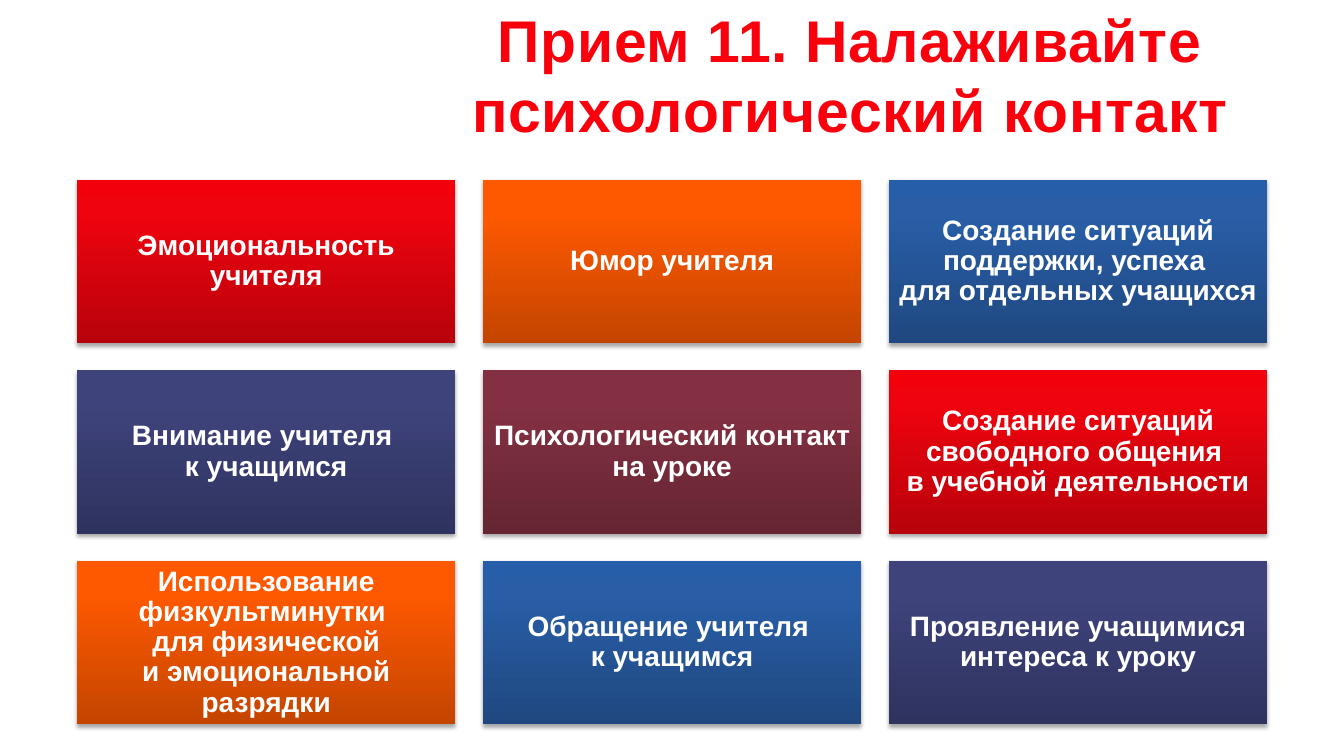
import pptx
import pptx.util
import pptx.oxml
import pptx.oxml.ns
import pptx.dml.color
import pptx.enum.shapes
import pptx.enum.text

Cm = pptx.util.Cm
Pt = pptx.util.Pt

TITLE = "Прием 11. Налаживайте психологический контакт"
CARDS = [
    "Эмоциональность учителя",
    "Юмор учителя",
    "Создание ситуаций поддержки, успеха \nдля отдельных учащихся",
    "Внимание учителя \nк учащимся",
    "Психологический контакт на уроке",
    "Создание ситуаций свободного общения \nв учебной деятельности",
    "Использование физкультминутки \nдля физической\nи эмоциональной разрядки",
    "Обращение учителя \nк учащимся",
    "Проявление учащимися интереса к уроку",
]
GRADIENTS = [
    ("B8020B", "EE030E", "F2000C"),
    ("C44500", "FE5900", "FF5A00"),
    ("1F4880", "295EA7", "265EAA"),
    ("2F335F", "3E437B", "3D427D"),
    ("652533", "833142", "852F42"),
]
STOPS = (0, 80, 100)
COLS = 3
LEFT, TOP = 1.94, 4.53
CARD_W, CARD_H = 9.54, 4.12
STEP_X, STEP_Y = 10.23, 4.8
TITLE_FONT = {"name": "Arial", "size": Pt(42), "bold": True}
CARD_FONT = {"name": "Arial", "size": Pt(20), "bold": True}
FRAME = {"word_wrap": True, "vertical_anchor": pptx.enum.text.MSO_ANCHOR.MIDDLE}
INSETS = dict.fromkeys(
    ("margin_left", "margin_top", "margin_right", "margin_bottom"), Cm(0.21))
NS = pptx.oxml.ns.nsdecls("a")


def rgb(value):
    return pptx.dml.color.RGBColor.from_string(value)


def set_all(target, values):
    for name, value in values.items():
        setattr(target, name, value)


def write(s, text, font, color, frame, spacing):
    tf = s.text_frame
    set_all(tf, frame)
    p = tf.paragraphs[0]
    p.text = text
    p.alignment = pptx.enum.text.PP_ALIGN.CENTER
    p.line_spacing = spacing
    for r in p.runs:
        set_all(r.font, font)
        r.font.color.rgb = rgb(color)
    return p


def shade(s, colors):
    stops = "".join(
        f'<a:gs pos="{pos * 1000}"><a:srgbClr val="{color}"/></a:gs>'
        for pos, color in zip(STOPS, colors))
    s.element.spPr.insert(2, pptx.oxml.parse_xml(
        f'<a:gradFill {NS} rotWithShape="1"><a:gsLst>{stops}</a:gsLst>'
        '<a:lin ang="16200000" scaled="0"/></a:gradFill>'))
    s.line.fill.background()
    s.shadow.inherit = False
    effects = s.element.spPr.find(pptx.oxml.ns.qn("a:effectLst"))
    effects.append(pptx.oxml.parse_xml(
        f'<a:outerShdw {NS} blurRad="40000" dist="23000" dir="5400000" '
        'rotWithShape="0"><a:srgbClr val="000000"><a:alpha val="35000"/>'
        '</a:srgbClr></a:outerShdw>'))


def main():
    prs = pptx.Presentation()
    prs.slide_width, prs.slide_height = Cm(33.87), Cm(19.05)
    slide = prs.slides.add_slide(prs.slide_layouts[6])

    title = slide.shapes.add_textbox(Cm(8.94), Cm(0.05), Cm(24.97), Cm(3.63))
    p = write(title, TITLE, TITLE_FONT, "F9000C", FRAME, 1.0)
    for r in p.runs:
        r.font._element.set("spc", "50")

    for i, text in enumerate(CARDS):
        row, col = divmod(i, COLS)
        s = slide.shapes.add_shape(
            pptx.enum.shapes.MSO_SHAPE.RECTANGLE,
            Cm(LEFT + col * STEP_X), Cm(TOP + row * STEP_Y),
            Cm(CARD_W), Cm(CARD_H))
        shade(s, GRADIENTS[i % len(GRADIENTS)])
        write(s, text, CARD_FONT, "FFFFFF", FRAME | INSETS, 0.9)

    prs.save("out.pptx")


if __name__ == "__main__":
    main()
